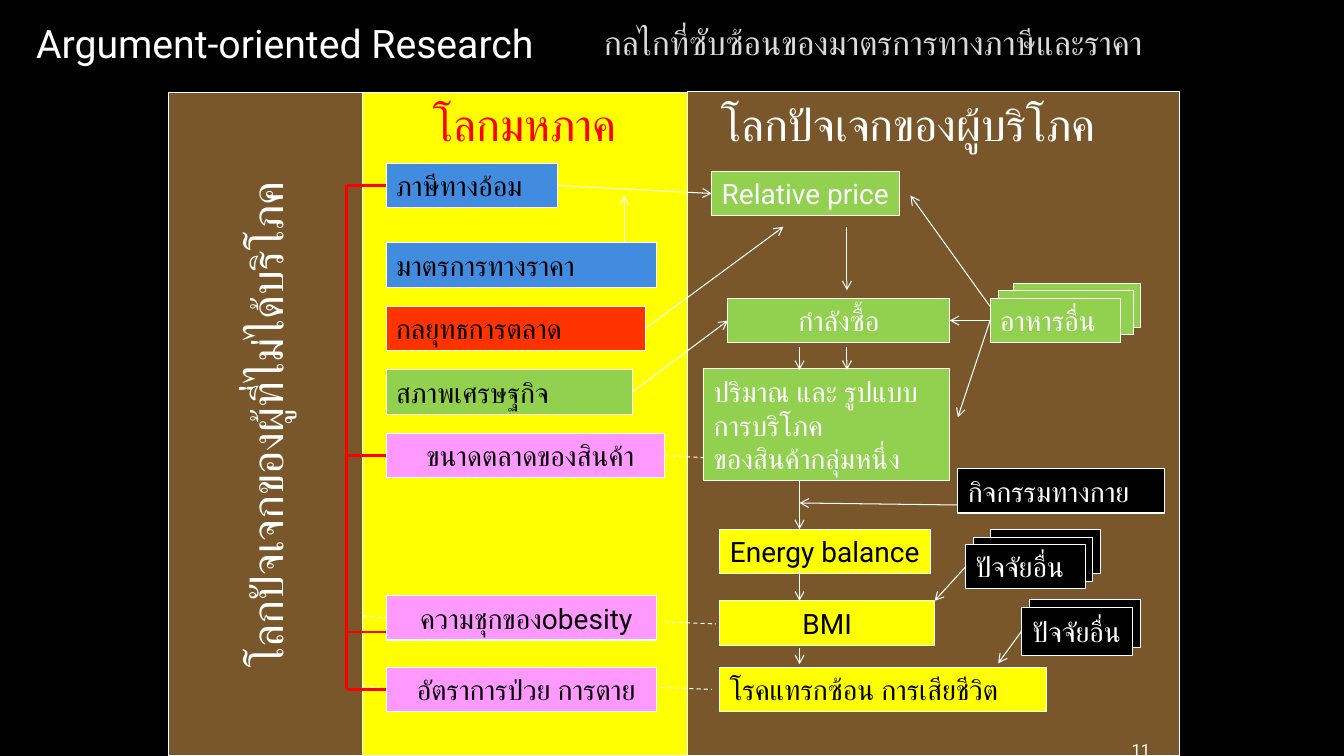
import pptx
import pptx.util
import pptx.dml.color
import pptx.enum.dml
import pptx.enum.shapes
import pptx.enum.text
import pptx.oxml
import pptx.oxml.ns

RGB = pptx.dml.color.RGBColor
ALIGN = pptx.enum.text.PP_ALIGN
MID = pptx.enum.text.MSO_ANCHOR.MIDDLE
RECT = pptx.enum.shapes.MSO_SHAPE.RECTANGLE
STRAIGHT = pptx.enum.shapes.MSO_CONNECTOR.STRAIGHT

BLACK = RGB(0, 0, 0)
WHITE = RGB(255, 255, 255)
GREY = RGB(0xDA, 0xDA, 0xDA)
YELLOW = RGB(0xFF, 0xFF, 0)
BROWN = RGB(0x7A, 0x57, 0x2A)
BLUE = RGB(0x41, 0x8C, 0xDF)
GREEN = RGB(0x92, 0xD0, 0x50)
ORANGE = RGB(0xFF, 0x33, 0)
PINK = RGB(0xFF, 0x99, 0xFF)
RED = RGB(0xFF, 0, 0)

SCALE = 9144
TOP, LEFT, BOTTOM, RIGHT = 0, 1, 2, 3


def px(n):
    return pptx.util.Emu(n * SCALE)


def write(shape, text, size, color, align=ALIGN.LEFT, pad=(10, 0)):
    frame = shape.text_frame
    frame.text = text
    frame.word_wrap = True
    frame.vertical_anchor = MID
    frame.margin_left, frame.margin_right = map(px, pad)
    for para in frame.paragraphs:
        para.alignment = align
        for run in para.runs:
            run.font.name = "Roboto"
            run.font.size = pptx.util.Pt(size)
            run.font.color.rgb = color


def label(slide, box, text, size, color, align=ALIGN.LEFT):
    shape = slide.shapes.add_textbox(*map(px, box))
    write(shape, text, size, color, align)


def block(slide, box, fill):
    shape = slide.shapes.add_shape(RECT, *map(px, box))
    shape.shadow.inherit = False
    shape.fill.solid()
    shape.fill.fore_color.rgb = fill
    shape.line.color.rgb = WHITE
    shape.line.width = pptx.util.Pt(0.75)
    return shape


def link(slide, start, end, color=WHITE, width=0.75, arrow=False, dash=False):
    spots = []
    for spot in (start, end):
        spots += [0, 0] if hasattr(spot[0], "shape_id") else map(px, spot)
    line = slide.shapes.add_connector(STRAIGHT, *spots)
    if hasattr(start[0], "shape_id"):
        line.begin_connect(*start)
    if hasattr(end[0], "shape_id"):
        line.end_connect(*end)
    line.line.color.rgb = color
    line.line.width = pptx.util.Pt(width)
    if dash:
        line.line.dash_style = pptx.enum.dml.MSO_LINE.DASH
    if arrow:
        tip = pptx.oxml.parse_xml(
            "<a:tailEnd %s type='arrow'/>" % pptx.oxml.ns.nsdecls("a"))
        line.line._get_or_add_ln().append(tip)
    line._element.spPr.append(pptx.oxml.parse_xml(
        "<a:effectLst %s/>" % pptx.oxml.ns.nsdecls("a")))


def header(slide, box):
    x, y, w, h = box
    title = slide.shapes.title
    title.left, title.top = px(x + 432), px(y + 4)
    title.width, title.height = px(868), px(h - 4)
    write(title, "กลไกที่ซับซ้อนของมาตรการทางภาษีและราคา", 24, GREY,
          ALIGN.CENTER, (10, 10))
    label(slide, (x + 26, y + 14, 534, 57), "Argument-oriented Research", 28, WHITE)


def others(slide, box):
    panel = block(slide, box, BROWN)
    write(panel, "โลกปัจเจกของผู้ที่ไม่ได้บริโภค", 32, WHITE, ALIGN.CENTER, (0, 0))
    panel.text_frame._txBody.bodyPr.set("vert", "vert270")


def macro(slide, box):
    x, y, w, h = box
    block(slide, box, YELLOW)
    label(slide, (x + 60, y - 1, 231, 64), "โลกมหภาค", 32, RED)
    rows = [
        ("tax", 70, 170, BLUE, ALIGN.LEFT, "ภาษีทางอ้อม"),
        ("price", 149, 268, BLUE, ALIGN.LEFT, "มาตรการทางราคา"),
        ("plan", 212, 257, ORANGE, ALIGN.LEFT, "กลยุทธการตลาด"),
        ("wealth", 275, 244, GREEN, ALIGN.LEFT, "สภาพเศรษฐกิจ"),
        ("market", 338, 276, PINK, ALIGN.CENTER, "ขนาดตลาดของสินค้า"),
        ("obese", 499, 268, PINK, ALIGN.CENTER, "ความชุกของobesity"),
        ("death", 570, 268, PINK, ALIGN.CENTER, "อัตราการป่วย การตาย"),
    ]
    parts = {}
    for name, top, wide, fill, align, text in rows:
        parts[name] = block(slide, (x + 23, y + top, wide, 44), fill)
        write(parts[name], text, 20, BLACK, align)
    return parts


def person(slide, box):
    x, y, w, h = box
    block(slide, box, BROWN)
    label(slide, (x + 24, y, 446, 64), "โลกปัจเจกของผู้บริโภค", 32, WHITE)
    backs = [
        (323, 190, 126, 44, GREEN), (308, 197, 134, 44, GREEN),
        (300, 434, 110, 44, BLACK), (284, 442, 118, 44, BLACK),
        (339, 504, 110, 47, BLACK),
    ]
    for left, top, wide, high, fill in backs:
        block(slide, (x + left, y + top, wide, high), fill)
    cards = [
        ("cost", 24, 79, 186, 44, GREEN, WHITE, ALIGN.LEFT, 0, "Relative price"),
        ("power", 40, 205, 220, 44, GREEN, WHITE, ALIGN.CENTER, 10, "กำลังซื้อ"),
        ("amount", 16, 275, 244, 111, GREEN, WHITE, ALIGN.LEFT, 10,
         "ปริมาณ และ รูปแบบการบริโภค\nของสินค้ากลุ่มหนึ่ง"),
        ("energy", 32, 434, 209, 44, YELLOW, BLACK, ALIGN.LEFT, 0, "Energy balance"),
        ("mass", 32, 505, 213, 44, YELLOW, BLACK, ALIGN.CENTER, 10, "BMI"),
        ("illness", 32, 571, 324, 44, YELLOW, BLACK, ALIGN.LEFT, 0,
         "โรคแทรกซ้อน การเสียชีวิต"),
        ("active", 268, 374, 205, 44, BLACK, WHITE, ALIGN.LEFT, 0, "กิจกรรมทางกาย"),
        ("food", 300, 205, 129, 44, GREEN, WHITE, ALIGN.LEFT, 0, "อาหารอื่น"),
        ("factor", 276, 449, 119, 44, BLACK, WHITE, ALIGN.LEFT, 0, "ปัจจัยอื่น"),
        ("risk", 331, 512, 110, 47, BLACK, WHITE, ALIGN.CENTER, 10, "ปัจจัยอื่น"),
    ]
    parts = {}
    for name, left, top, wide, high, fill, ink, align, pad, text in cards:
        parts[name] = block(slide, (x + left, y + top, wide, high), fill)
        write(parts[name], text, 20, ink, align, (10, pad))
    label(slide, (x + 241, y + 635, 218, 35), "11", 12, WHITE, ALIGN.RIGHT)
    return parts


def links(slide, box, parts):
    x, y, w, h = box

    def at(left, top):
        return x + left, y + top

    def side(name, edge):
        return parts[name], edge

    arrows = [
        (side("tax", RIGHT), side("cost", LEFT)),
        (side("plan", RIGHT), at(610, 134)),
        (at(452, 150), at(452, 103)),
        (at(815, 213), at(736, 103)),
        (at(673, 134), at(673, 197)),
        (side("food", LEFT), at(783, 323)),
        (side("food", LEFT), side("power", RIGHT)),
        (side("wealth", RIGHT), side("power", LEFT)),
        (at(783, 410), at(626, 408)),
        (side("factor", LEFT), at(760, 505)),
        (side("risk", LEFT), at(823, 567)),
        (at(673, 253), at(673, 276)),
    ]
    for top, end in ((253, 276), (386, 434), (473, 505), (552, 568)):
        arrows.append((at(626, top), at(626, end)))
    for start, end in arrows:
        link(slide, start, end, arrow=True)

    dashes = [
        (side("market", RIGHT), at(531, 363)),
        (at(492, 526), at(543, 528)),
        (at(488, 591), at(539, 593)),
        (at(193, 520), side("obese", LEFT)),
        (at(193, 589), side("death", LEFT)),
    ]
    for start, end in dashes:
        link(slide, start, end, dash=True)

    link(slide, at(177, 93), at(177, 593), RED, 2)
    for top, end in ((93, side("tax", LEFT)), (361, side("market", LEFT)),
                     (536, at(216, 536)), (593, side("death", LEFT))):
        link(slide, at(177, top), end, RED, 2)


def main():
    deck = pptx.Presentation()
    deck.slide_width, deck.slide_height = px(1333), px(750)
    slide = deck.slides.add_slide(deck.slide_layouts[5])
    slide.background.fill.solid()
    slide.background.fill.fore_color.rgb = BLACK
    header(slide, (0, 0, 1333, 80))
    parts = macro(slide, (360, 92, 323, 658))
    parts.update(person(slide, (682, 91, 488, 659)))
    others(slide, (167, 92, 193, 658))
    links(slide, (167, 91, 1003, 659), parts)
    deck.save("out.pptx")


if __name__ == "__main__":
    main()
